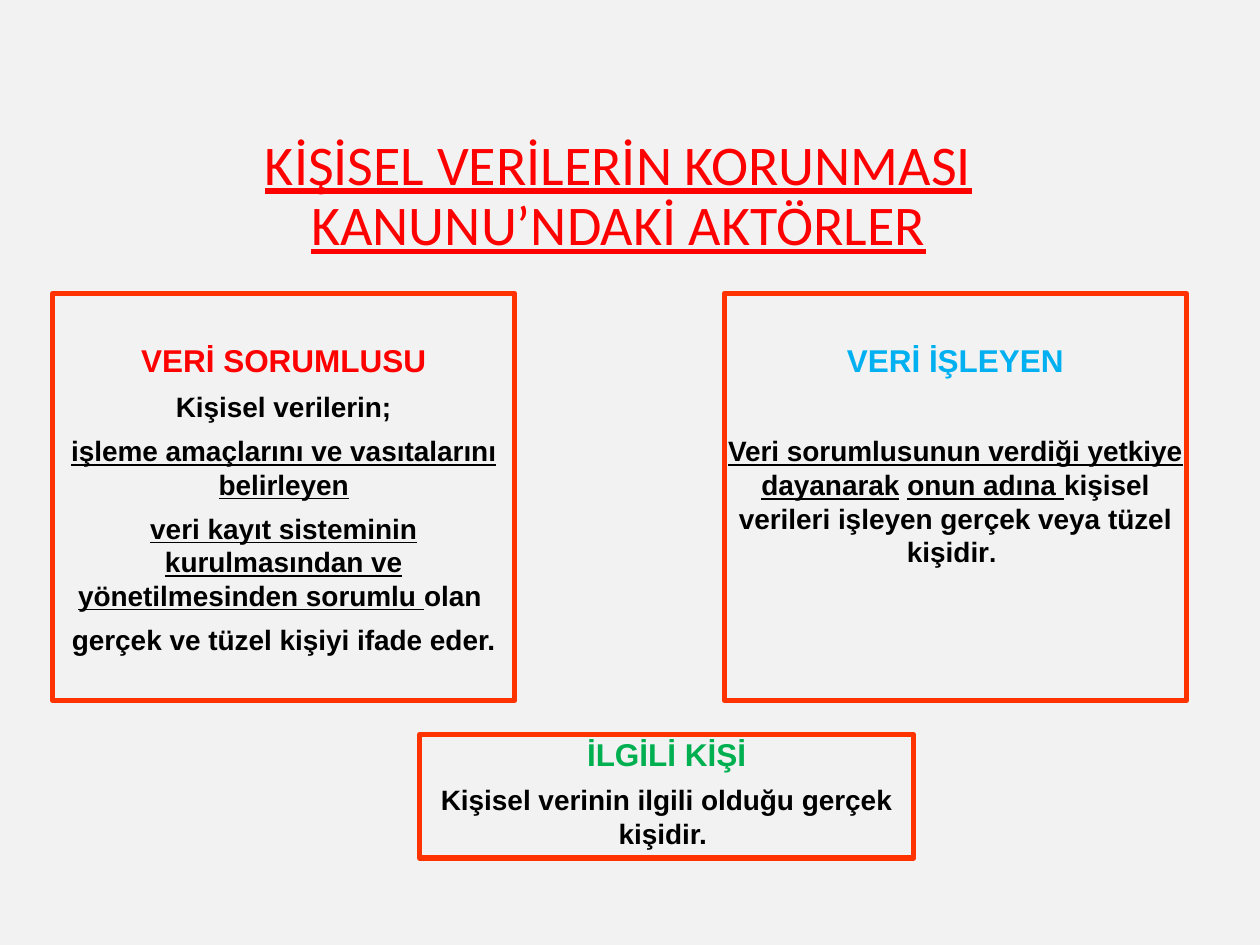
"""Build the slide on the actors named in the personal data protection law."""
import pptx
import pptx.dml.color
import pptx.enum.shapes
import pptx.enum.text
import pptx.util
from pptx.util import Cm, Pt

RED = pptx.dml.color.RGBColor(0xFF, 0x00, 0x00)
BLUE = pptx.dml.color.RGBColor(0x00, 0xB0, 0xF0)
GREEN = pptx.dml.color.RGBColor(0x00, 0xB0, 0x50)
BLACK = pptx.dml.color.RGBColor(0x00, 0x00, 0x00)
ORANGE = pptx.dml.color.RGBColor(0xFF, 0x33, 0x00)
LIGHT_GREY = pptx.dml.color.RGBColor(0xF2, 0xF2, 0xF2)
CENTER = pptx.enum.text.PP_ALIGN.CENTER


def add_span(para, text, size, color, underline=False):
    span = para.add_run()
    span.text = text
    span.font.name = "Arial"
    span.font.size = Pt(size)
    span.font.bold = True
    span.font.underline = underline
    span.font.color.rgb = color


deck = pptx.Presentation()
deck.slide_width = Cm(25.4)
deck.slide_height = Cm(19.05)
page = deck.slides.add_slide(deck.slide_layouts[5])
page.background.fill.solid()
page.background.fill.fore_color.rgb = LIGHT_GREY

title = page.shapes.title
title.left, title.top, title.width, title.height = Cm(2.16), Cm(2.54), Cm(20.62), Cm(4.11)
frame = title.text_frame
frame.text = "KİŞİSEL VERİLERİN KORUNMASI KANUNU’NDAKİ AKTÖRLER"
frame.word_wrap = True
frame.auto_size = pptx.enum.text.MSO_AUTO_SIZE.NONE
frame.vertical_anchor = pptx.enum.text.MSO_ANCHOR.MIDDLE
frame.margin_bottom = Cm(1.35)
heading = frame.paragraphs[0]
heading.alignment = CENTER
heading.line_spacing = 0.9
heading_font = heading.runs[0].font
heading_font.name = "Calibri"
heading_font.size = Pt(32)
heading_font.underline = True
heading_font.color.rgb = RED

controller_text = [
    [("Kişisel verilerin;", 16, False)],
    [("işleme amaçlarını ve vasıtalarını belirleyen", 16, True)],
    [("veri kayıt sisteminin kurulmasından ve yönetilmesinden sorumlu ", 16, True),
     ("olan ", 16, False)],
    [("gerçek ve tüzel kişiyi ifade eder.", 16, False)],
]
subject_text = [[("Kişisel verinin ilgili olduğu gerçek kişidir. ", 16, False)]]
processor_text = [[
    ("Veri sorumlusunun verdiği yetkiye dayanarak", 16, True),
    (" ", 16, False),
    ("onun adına ", 16, True),
    ("kişisel verileri işleyen gerçek veya tüzel kişidir", 16, False),
    (". ", 15, False),
]]

actors = [
    ("VERİ SORUMLUSU", RED, (1.06, 5.92, 9.32, 8.2), 0.96, 0, controller_text),
    ("İLGİLİ KİŞİ", GREEN, (8.46, 14.81, 9.96, 2.49), 0, 0, subject_text),
    ("VERİ İŞLEYEN", BLUE, (14.6, 5.92, 9.32, 8.2), 0.96, 25.4, processor_text),
]

for name, color, place, top_margin, gap, body in actors:
    box = page.shapes.add_shape(
        pptx.enum.shapes.MSO_SHAPE.RECTANGLE, *[Cm(length) for length in place])
    box.shadow.inherit = False
    box.fill.background()
    box.line.color.rgb = ORANGE
    box.line.width = Pt(3)
    frame = box.text_frame
    frame.word_wrap = True
    frame.vertical_anchor = pptx.enum.text.MSO_ANCHOR.TOP
    frame.margin_left = frame.margin_right = frame.margin_bottom = 0
    frame.margin_top = Cm(top_margin)
    add_span(frame.paragraphs[0], name, 18, color)
    for spans in body:
        para = frame.add_paragraph()
        for text, size, underline in spans:
            add_span(para, text, size, BLACK, underline)
    frame.paragraphs[1].space_before = Pt(gap)
    for para in frame.paragraphs:
        para.alignment = CENTER
        para.space_after = Pt(6)

deck.save("out.pptx")
